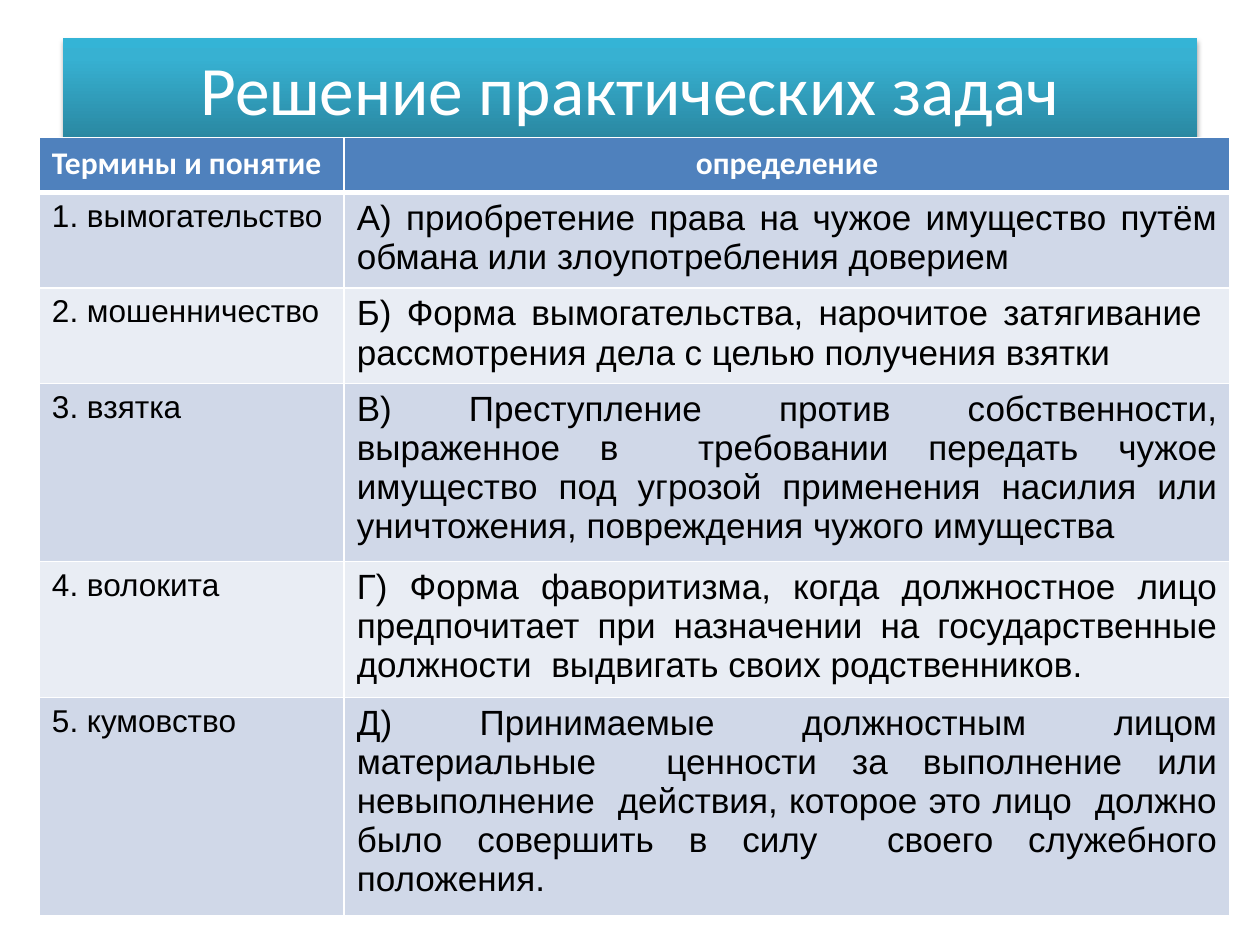
from copy import deepcopy
from dataclasses import dataclass

from lxml import etree
from pptx import Presentation
from pptx.dml.color import RGBColor
from pptx.enum.text import MSO_ANCHOR, PP_ALIGN
from pptx.oxml.ns import qn
from pptx.util import Pt

LEFT, MID, JUST = PP_ALIGN.LEFT, PP_ALIGN.CENTER, PP_ALIGN.JUSTIFY
CENTRE = MSO_ANCHOR.MIDDLE


@dataclass(frozen=True)
class Theme:
    white: str = "FFFFFF"
    black: str = "000000"
    head: str = "4F81BD"
    bands: tuple = ("D0D8E8", "E9EDF4")
    grade: tuple = ((0, "2A88A2"), (0.8, "37B1D2"), (1, "34B4D6"))
    title: float = 39.6
    term: float = 18
    text: float = 20
    sans: str = "Calibri"
    body: str = "Arial"


class Deck:
    def __init__(self, theme, slide):
        self.theme = theme
        self.slide = slide

    def label(self, frame, text, size, font, color, align=LEFT, bold=False):
        para = frame.paragraphs[0]
        para.alignment = align
        run = para.add_run()
        run.text = text
        run.font.size = Pt(size)
        run.font.name = font
        run.font.bold = bold
        run.font.color.rgb = RGBColor.from_string(color)

    def shade(self, shape):
        """Gradient fill rising from the base, with a soft shadow below."""
        fill = shape.fill
        fill.gradient()
        fill.gradient_angle = 90
        stops = shape.element.spPr.find(".//" + qn("a:gsLst"))
        stops.append(deepcopy(stops[-1]))
        for stop, (place, color) in zip(fill.gradient_stops, self.theme.grade):
            stop.position = place
            stop.color.rgb = RGBColor.from_string(color)
        shape.line.fill.background()
        shape.shadow.inherit = False
        effects = shape.element.spPr.find(qn("a:effectLst"))
        cast = etree.SubElement(effects, qn("a:outerShdw"), blurRad=str(Pt(3.1)),
                                dist=str(Pt(1.8)), dir="5400000", rotWithShape="0")
        tint = etree.SubElement(cast, qn("a:srgbClr"), val=self.theme.black)
        etree.SubElement(tint, qn("a:alpha"), val="35000")

    def title(self, text, left, top, width, height):
        shape = self.slide.shapes.title
        shape.left, shape.top = Pt(left), Pt(top)
        shape.width, shape.height = Pt(width), Pt(height)
        self.shade(shape)
        shape.text_frame.vertical_anchor = CENTRE
        self.label(shape.text_frame, text, self.theme.title, self.theme.sans,
                   self.theme.white, MID)

    def edge(self, cell, **widths):
        props = cell._tc.get_or_add_tcPr()
        for side in ("L", "R", "T", "B"):
            line = etree.SubElement(props, qn("a:ln" + side),
                                    w=str(Pt(widths.get(side, 1))))
            solid = etree.SubElement(line, qn("a:solidFill"))
            etree.SubElement(solid, qn("a:srgbClr"), val=self.theme.white)

    def paint(self, cell, color):
        cell.fill.solid()
        cell.fill.fore_color.rgb = RGBColor.from_string(color)

    def table(self, head, rows, left, top, cols, heights):
        look = self.theme
        grid = self.slide.shapes.add_table(
            len(heights), len(cols), Pt(left), Pt(top),
            Pt(sum(cols)), Pt(sum(heights))).table
        for col, width in zip(grid.columns, cols):
            col.width = Pt(width)
        for row, height in zip(grid.rows, heights):
            row.height = Pt(height)

        # Header row
        for c, (text, align) in enumerate(zip(head, (LEFT, MID))):
            cell = grid.cell(0, c)
            self.edge(cell, B=3)
            self.paint(cell, look.head)
            self.label(cell.text_frame, text, look.term, look.sans,
                       look.white, align, True)

        # Banded rows: term, then definition
        kinds = ((look.term, LEFT), (look.text, JUST))
        for r, row in enumerate(rows, 1):
            for c, (text, (size, align)) in enumerate(zip(row, kinds)):
                cell = grid.cell(r, c)
                self.edge(cell, T=3 if r == 1 else 1)
                self.paint(cell, look.bands[(r - 1) % 2])
                self.label(cell.text_frame, text, size, look.body,
                           look.black, align)


HEAD = ("Термины и понятие", "определение")
ROWS = (
    ("1. вымогательство",
     "А) приобретение права на чужое имущество путём обмана или "
     "злоупотребления доверием"),
    ("2. мошенничество",
     "Б) Форма вымогательства, нарочитое затягивание  рассмотрения дела "
     "с целью получения взятки"),
    ("3. взятка",
     "В) Преступление против собственности, выраженное в  требовании "
     "передать чужое имущество под угрозой применения насилия или "
     "уничтожения, повреждения чужого имущества"),
    ("4. волокита",
     "Г) Форма фаворитизма, когда должностное лицо предпочитает при "
     "назначении на государственные должности  выдвигать своих "
     "родственников."),
    ("5. кумовство",
     "Д) Принимаемые должностным лицом материальные  ценности за "
     "выполнение или невыполнение  действия, которое это лицо  должно "
     "было совершить в силу  своего служебного положения."),
)


def main():
    show = Presentation()
    show.slide_width, show.slide_height = Pt(720), Pt(540)
    deck = Deck(Theme(), show.slides.add_slide(show.slide_layouts[5]))

    deck.title("Решение практических задач", 36, 21.6, 648, 57)
    deck.table(HEAD, ROWS, 22.5, 78.7, (174.2, 506.2),
               (31.2, 54.7, 54.7, 101.5, 77.8, 124.6))

    show.save("out.pptx")


if __name__ == "__main__":
    main()
